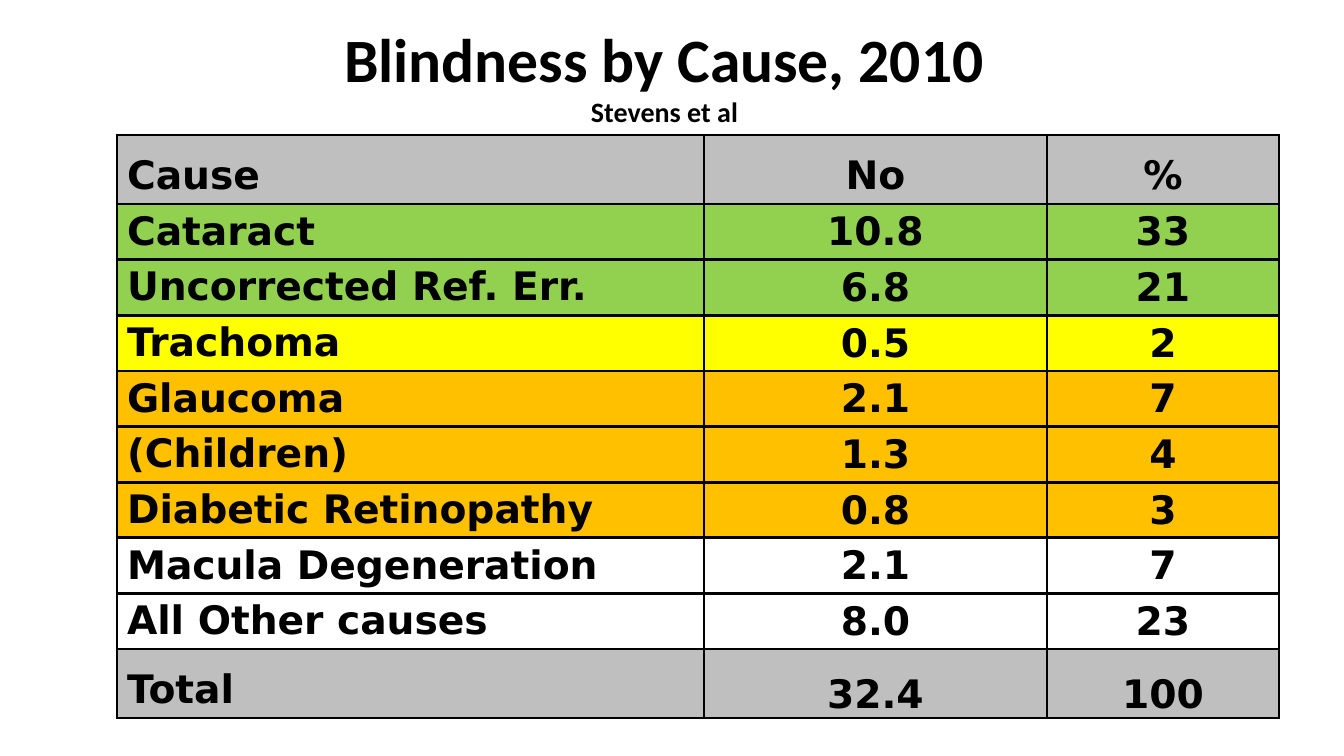
from lxml import etree
from pptx import Presentation
from pptx import util as u
from pptx.dml.color import RGBColor
from pptx.enum import text
from pptx.oxml.ns import qn

BLACK = RGBColor(0x00, 0x00, 0x00)
GREY = RGBColor(0xBF, 0xBF, 0xBF)
GREEN = RGBColor(0x92, 0xD0, 0x50)
YELLOW = RGBColor(0xFF, 0xFF, 0x00)
ORANGE = RGBColor(0xFF, 0xC0, 0x00)

CAUSES = [
    (("Cause", "No", "%"), GREY),
    (("Cataract", "10.8", "33"), GREEN),
    (("Uncorrected Ref. Err.", "6.8", "21"), GREEN),
    (("Trachoma", "0.5", "2"), YELLOW),
    (("Glaucoma", "2.1", "7"), ORANGE),
    (("(Children)", "1.3", "4"), ORANGE),
    (("Diabetic Retinopathy", "0.8", "3"), ORANGE),
    (("Macula Degeneration", "2.1", "7"), None),
    (("All Other causes", "8.0", "23"), None),
    (("Total", "32.4", "100"), GREY),
]
COLUMN_WIDTHS = (587, 343, 232)
OUTER_ROW_HEIGHT, INNER_ROW_HEIGHT = 69, 52


def px(count):
    return u.Emu(round(count * 914400 / 100.8))


class CauseSlide:
    title_font = "Calibri"
    table_font = "DejaVu Sans"
    table_size = 28
    thick, thin = 2.25, 1
    hanging = 38

    def __init__(self, deck):
        self.page = deck.slides.add_slide(deck.slide_layouts[6])

    def span(self, para, words, font, size):
        span = para.add_run()
        span.text = words
        span.font.name = font
        span.font.size = u.Pt(size)
        span.font.bold = True
        span.font.color.rgb = BLACK

    def heading(self, left, top, width, height, lines):
        box = self.page.shapes.add_textbox(px(left), px(top), px(width), px(height))
        frame = box.text_frame
        frame.word_wrap = True
        frame.auto_size = text.MSO_AUTO_SIZE.SHAPE_TO_FIT_TEXT
        for index, (words, size) in enumerate(lines):
            para = frame.add_paragraph() if index else frame.paragraphs[0]
            para.alignment = text.PP_ALIGN.CENTER
            self.span(para, words, self.title_font, size)

    def borders(self, cell, top, bottom):
        properties = cell._tc.get_or_add_tcPr()
        edges = (("lnL", self.thick), ("lnR", self.thick), ("lnT", top), ("lnB", bottom))
        for index, (edge, points) in enumerate(edges):
            line = etree.Element(qn(f"a:{edge}"), w=str(int(u.Pt(points))))
            fill = etree.SubElement(line, qn("a:solidFill"))
            etree.SubElement(fill, qn("a:srgbClr"), val=str(BLACK))
            properties.insert(index, line)

    def cell(self, cell, words, color, row, column, last_row):
        if color is None:
            cell.fill.background()
        else:
            cell.fill.solid()
            cell.fill.fore_color.rgb = color
        self.borders(cell, self.thin if row == 1 else self.thick,
                     self.thin if row == 0 else self.thick)
        para = cell.text_frame.paragraphs[0]
        is_label = row == 0 or column == 0
        if is_label:
            properties = para._p.get_or_add_pPr()
            properties.set("marL", str(px(self.hanging)))
            properties.set("indent", str(-px(self.hanging)))
        else:
            cell.margin_left = cell.margin_right = cell.margin_top = px(1)
            cell.margin_bottom = 0
        at_bottom = is_label or row == last_row
        cell.vertical_anchor = (text.MSO_ANCHOR.BOTTOM if at_bottom
                                else text.MSO_ANCHOR.MIDDLE)
        para.alignment = text.PP_ALIGN.CENTER if column else text.PP_ALIGN.LEFT
        self.span(para, words, self.table_font, self.table_size)

    def table(self, left, top, widths, rows):
        last_row = len(rows) - 1
        heights = [OUTER_ROW_HEIGHT if row in (0, last_row) else INNER_ROW_HEIGHT
                   for row in range(len(rows))]
        table = self.page.shapes.add_table(
            len(rows), len(widths), px(left), px(top),
            px(sum(widths)), px(sum(heights))).table
        table.first_row = table.horz_banding = False
        for column, width in zip(table.columns, widths):
            column.width = px(width)
        for row, (values, color) in enumerate(rows):
            table.rows[row].height = px(heights[row])
            for column, words in enumerate(values):
                self.cell(table.cell(row, column), words, color, row, column, last_row)


def main():
    deck = Presentation()
    deck.slide_width, deck.slide_height = px(1344), px(756)
    slide = CauseSlide(deck)
    slide.table(117, 135, COLUMN_WIDTHS, CAUSES)
    slide.heading(307, 16, 715, 119,
                  [("Blindness by Cause, 2010", 44), ("Stevens et al", 20)])
    deck.save("out.pptx")


if __name__ == "__main__":
    main()
